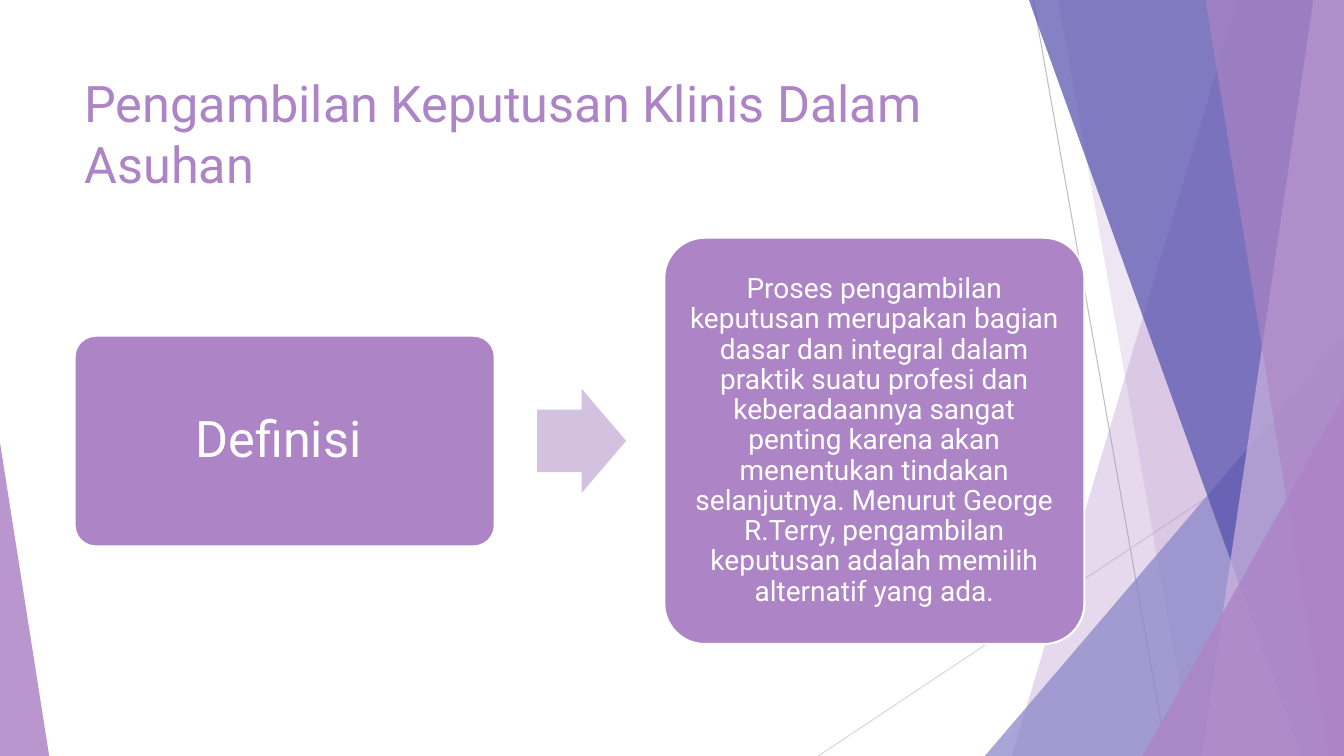
"""Build the slide on clinical decision making in care."""
from lxml.etree import SubElement
from pptx import Presentation
from pptx.dml.color import RGBColor
from pptx.enum.shapes import MSO_CONNECTOR, MSO_SHAPE
from pptx.enum.text import MSO_ANCHOR, PP_ALIGN
from pptx.oxml.ns import qn
from pptx.util import Cm, Pt

WIDTH, HEIGHT = 33.87, 19.05


def color(value):
    return RGBColor.from_string(value)


class Deck:
    font = "Roboto"
    accent = "AD84C6"
    white = "FFFFFF"

    def __init__(self):
        self.prs = Presentation()
        self.prs.slide_width, self.prs.slide_height = Cm(WIDTH), Cm(HEIGHT)
        self.slide = self.prs.slides.add_slide(self.prs.slide_layouts[6])
        self.shapes = self.slide.shapes

    def line(self, x1, y1, x2, y2, hue):
        c = self.shapes.add_connector(
            MSO_CONNECTOR.STRAIGHT, Cm(x1), Cm(y1), Cm(x2), Cm(y2))
        c.line.color.rgb = color(hue)
        c.line.width = Pt(0.75)
        SubElement(c.element.spPr, qn("a:effectLst"))

    def paint(self, sp, hue, opacity=100):
        sp.shadow.inherit = False
        sp.fill.solid()
        sp.fill.fore_color.rgb = color(hue)
        sp.line.fill.background()
        if opacity < 100:
            clr = sp.element.spPr.find(qn("a:solidFill")).find(qn("a:srgbClr"))
            SubElement(clr, qn("a:alpha"), val=str(opacity * 1000))

    def band(self, top_x, bottom_x, hue, opacity):
        fb = self.shapes.build_freeform(Cm(top_x), 0)
        fb.add_line_segments([(Cm(WIDTH), 0), (Cm(WIDTH), Cm(HEIGHT)),
                              (Cm(bottom_x), Cm(HEIGHT))])
        self.paint(fb.convert_to_shape(), hue, opacity)

    def shape(self, kind, box, adjustments, hue, opacity=100):
        sp = self.shapes.add_shape(kind, *map(Cm, box))
        for i, value in enumerate(adjustments):
            sp.adjustments[i] = value
        self.paint(sp, hue, opacity)
        return sp

    def triangle(self, x, y, apex, hue, opacity, width):
        self.shape(MSO_SHAPE.ISOSCELES_TRIANGLE,
                   (x, y, width, HEIGHT - y), [apex], hue, opacity)

    def text(self, sp, words, size, hue):
        tf = sp.text_frame
        tf.word_wrap = True
        tf.text = words
        p = tf.paragraphs[0]
        r = p.runs[0]
        r.font.name, r.font.size = self.font, Pt(size)
        r.font.color.rgb = color(hue)
        return tf, p

    def title(self, words, box):
        sp = self.shapes.add_textbox(*map(Cm, box))
        tf, p = self.text(sp, words, 36, self.accent)
        tf.vertical_anchor = MSO_ANCHOR.TOP
        p.alignment = PP_ALIGN.LEFT

    def card(self, words, box, size, inset):
        sp = self.shape(MSO_SHAPE.ROUNDED_RECTANGLE, box, [0.1], self.accent)
        sp.line.color.rgb = color(self.white)
        sp.line.width = Pt(1.5)
        tf, p = self.text(sp, words, size, self.white)
        tf.margin_left = tf.margin_right = Cm(inset)
        tf.margin_top = tf.margin_bottom = Cm(inset)
        tf.vertical_anchor = MSO_ANCHOR.MIDDLE
        p.alignment = PP_ALIGN.CENTER
        p.line_spacing = 0.9

    def arrow(self, box, hue):
        self.shape(MSO_SHAPE.RIGHT_ARROW, box, [0.6, 0.5], hue)


def main():
    d = Deck()
    d.line(26.04, 0, 29.41, HEIGHT, "BFBFBF")
    d.line(WIDTH, 10.24, 20.62, HEIGHT, "D9D9D9")
    d.band(31.19, 25.5, d.accent, 30)
    d.band(26.67, 30.05, d.accent, 20)
    d.triangle(24.82, 8.46, 1, "8784C7", 72, WIDTH - 24.82)
    d.band(25.93, 32.79, "524EAB", 70)
    d.band(33.1, 30.28, "CEB5DD", 70)
    d.band(30.38, 33.48, d.accent, 65)
    d.triangle(28.8, 9.98, 1, d.accent, 80, WIDTH - 28.8)
    d.triangle(0, 11.15, 0, d.accent, 85, 1.24)

    d.title("Pengambilan Keputusan Klinis Dalam Asuhan",
            (1.88, 1.7, 23.88, 3.66))
    d.card("Definisi ", (1.88, 8.46, 10.59, 5.31), 36, 0.38)
    d.arrow((13.54, 9.8, 2.24, 2.62), "D3C2DF")
    d.card("Proses pengambilan keputusan merupakan bagian dasar dan integral "
           "dalam praktik suatu profesi dan keberadaannya sangat penting "
           "karena akan menentukan tindakan selanjutnya. Menurut George "
           "R.Terry, pengambilan keputusan adalah memilih alternatif yang ada.",
           (16.74, 5.99, 10.59, 10.24), 20, 0.2)
    d.prs.save("out.pptx")


if __name__ == "__main__":
    main()
